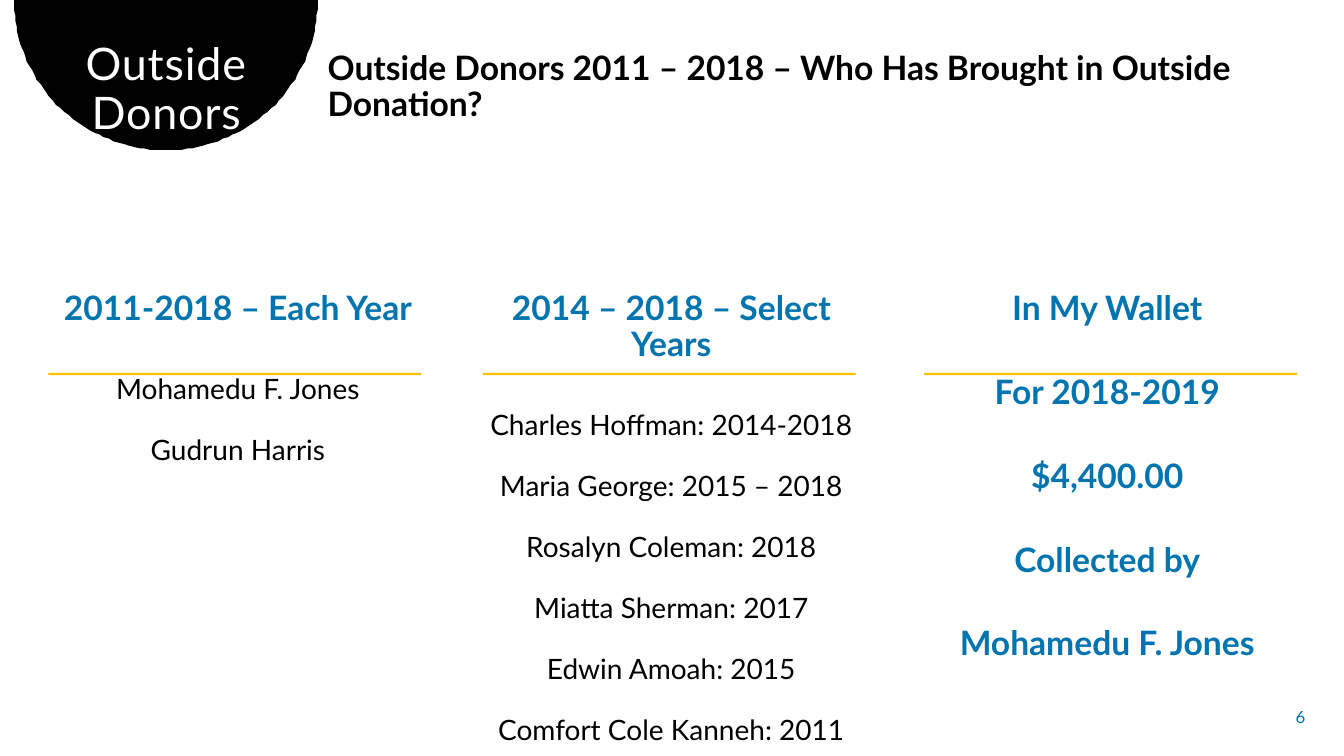
import math
from lxml import etree
from pptx import Presentation
from pptx import util as u
from pptx.dml.color import RGBColor
from pptx.enum import shapes, text
from pptx.oxml import ns

BLACK = RGBColor(0x00, 0x00, 0x00)
WHITE = RGBColor(0xFF, 0xFF, 0xFF)
BLUE = RGBColor(0x00, 0x74, 0xAF)
GOLD = RGBColor(0xFF, 0xC0, 0x00)
CENTER, LEFT, RIGHT = text.PP_ALIGN.CENTER, text.PP_ALIGN.LEFT, text.PP_ALIGN.RIGHT


def place(box, left, top, width, height, anchor=text.MSO_ANCHOR.TOP):
    box.left, box.top = u.Pt(left), u.Pt(top)
    box.width, box.height = u.Pt(width), u.Pt(height)
    frame = box.text_frame
    frame.word_wrap = True
    frame.auto_size = text.MSO_AUTO_SIZE.NONE
    frame.vertical_anchor = anchor
    return frame


def write(para, words, size, color, bold=False, align=CENTER, before=0, after=0, line=0.9):
    para.alignment = align
    para.line_spacing = line
    para.space_before, para.space_after = u.Pt(before), u.Pt(after)
    # No bullet and no hanging indent
    props = para._p.get_or_add_pPr()
    props.set("marL", "0")
    props.set("indent", "0")
    etree.SubElement(props, ns.qn("a:buNone"))
    span = para.add_run()
    span.text = words
    span.font.name = "Lato"
    span.font.size = u.Pt(size)
    span.font.bold = bold
    span.font.color.rgb = color
    return span


deck = Presentation()
deck.slide_width, deck.slide_height = u.Pt(960), u.Pt(540)
page = deck.slides.add_slide(deck.slide_layouts.get_by_name("Comparison"))
title = page.shapes.title
headline, *column_boxes = [box for box in page.placeholders
                           if box.placeholder_format.idx in (1, 2, 3, 4)]

# Black disc hanging from the top edge, behind the title
center_x, radius, depth = 118.5, 108.5, 107.3
arc = [(center_x + radius * math.cos(math.pi * step / 90),
        depth * math.sin(math.pi * step / 90)) for step in range(91)]
builder = page.shapes.build_freeform(*arc[0], scale=u.Pt(1))
builder.add_line_segments(arc[1:], close=True)
disc = builder.convert_to_shape()
disc.shadow.inherit = False
disc.fill.solid()
disc.fill.fore_color.rgb = BLACK
disc.line.fill.background()
title.element.addprevious(disc.element)

# Title and headline
frame = place(title, 25.2, 26.6, 187.2, 77)
span = write(frame.paragraphs[0], "Outside Donors", 32, WHITE)
span.font._element.set("spc", "60")
frame = place(headline, 226.8, 33.1, 715, 85.7)
write(frame.paragraphs[0], "Outside Donors 2011 – 2018 – Who Has Brought in Outside Donation?",
      24, BLACK, bold=True, align=LEFT, before=10)

# Columns: left, width, height, rule left, headings, names
columns = [
    (23.8, 292.3, 177.8, 34.6, ["2011-2018 – Each Year"],
     ["Mohamedu F. Jones", "Gudrun Harris"]),
    (328.3, 302.4, 309.6, 344.9, ["2014 – 2018 – Select Years"],
     ["Charles Hoffman: 2014-2018", "Maria George: 2015 – 2018", "Rosalyn Coleman: 2018",
      "Miatta Sherman: 2017", "Edwin Amoah: 2015", "Comfort Cole Kanneh: 2011"]),
    (642.2, 297.4, 275.8, 660.2,
     ["In My Wallet", "For 2018-2019", "$4,400.00", "Collected by", "Mohamedu F. Jones"], []),
]
for box, (left, width, height, rule_left, headings, names) in zip(column_boxes, columns):
    frame = place(box, left, 204.5, width, height)
    for index, words in enumerate(headings + names):
        para = frame.add_paragraph() if index else frame.paragraphs[0]
        if index < len(headings):
            write(para, words, 24, BLUE, bold=True, before=10, after=24)
        else:
            para.level = 1
            write(para, words, 20, BLACK, before=10, after=12)

    # Gold rule under the heading
    rule = page.shapes.add_shape(shapes.MSO_SHAPE.RECTANGLE, u.Pt(rule_left), u.Pt(266.4),
                                 u.Pt(266.4), u.Pt(1.6))
    rule.shadow.inherit = False
    rule.fill.solid()
    rule.fill.fore_color.rgb = GOLD
    rule.line.fill.background()

# Page number
number = page.shapes.add_textbox(0, 0, 0, 0)
frame = place(number, 900, 497.5, 39.6, 28.8, text.MSO_ANCHOR.MIDDLE)
write(frame.paragraphs[0], "6", 12, BLUE, align=RIGHT, line=1)

deck.save("out.pptx")
